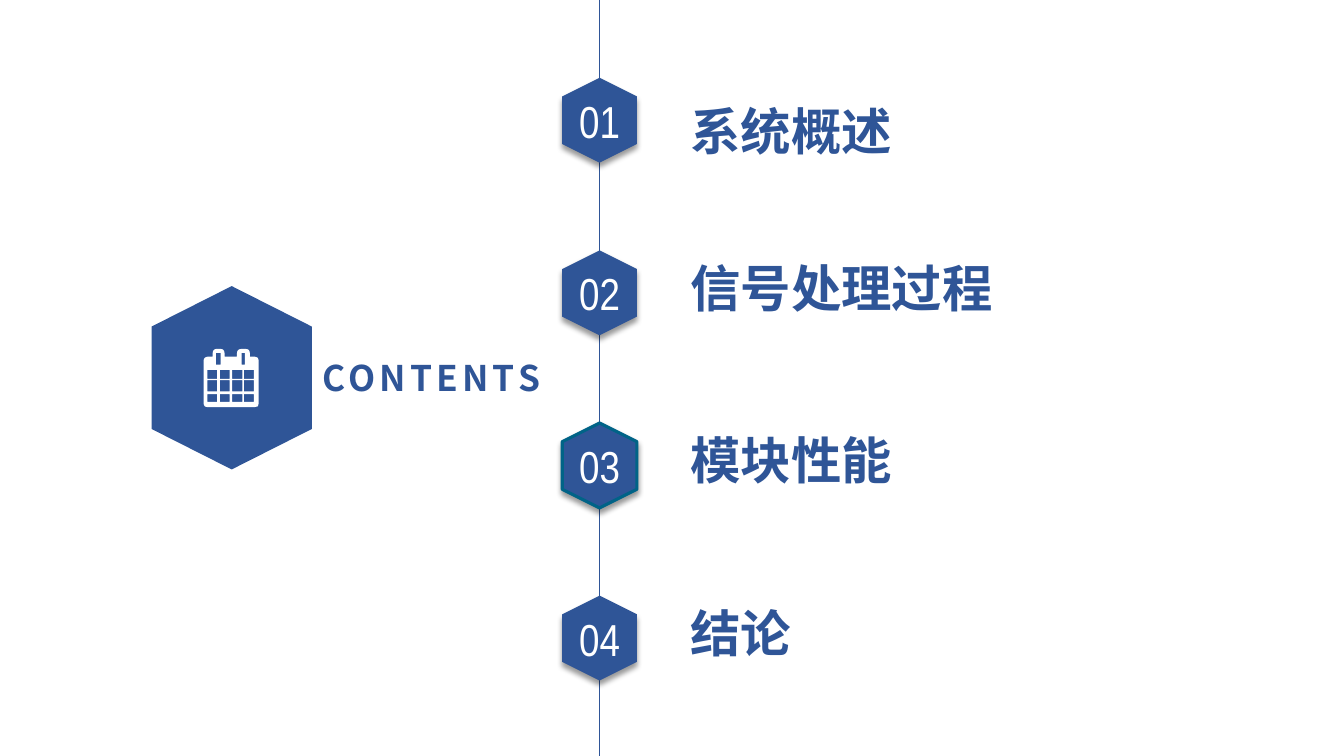
from pptx import Presentation
from pptx import util as u
from pptx.dml.color import RGBColor
from pptx.enum import shapes, text
from pptx.oxml import parse_xml
from pptx.oxml.ns import nsdecls, qn
from lxml import etree

Cm, Pt = u.Cm, u.Pt
HUE = {"blue": "2F5597", "teal": "006387", "white": "FFFFFF", "black": "000000"}
SANS, SLIM = "Noto Sans CJK SC", "Arial Narrow"
UNIT = Cm(0.01)  # freeform points are in hundredths of a centimetre
AXIS = 15.11     # centre of the timeline
STEP = 4.35      # distance between chapters

# chapter, bottom of its label, label width
ITEMS = [("系统概述", 4.04, 9.9), ("信号处理过程", 8.0, 9.9),
         ("模块性能", 12.35, 14.5), ("结论", 16.7, 14.5)]

# calendar outline: x, y, corner radius
CASE = [(513, 899, 10), (536, 899, 0), (536, 879, 11), (566, 879, 11),
        (566, 899, 0), (597, 899, 0), (597, 879, 13), (630, 879, 13),
        (630, 899, 0), (652, 899, 10), (652, 1026, 10), (513, 1026, 10)]
COLS = [(523, 547), (554, 579), (585, 611), (615, 640)]
ROWS = [(932, 955), (958, 986), (993, 1013)]
RINGS = [(544, 556), (609, 617)]


def rgb(name):
    return RGBColor.from_string(HUE[name])


def write(frame, words, size, font, color, align, anchor, bold=False):
    frame.vertical_anchor = anchor
    para = frame.paragraphs[0]
    para.alignment = align
    run = para.add_run()
    run.text = words
    run.font.size = Pt(size)
    run.font.bold = bold
    run.font.color.rgb = rgb(color)
    run.font.name = font
    props = run.font._element
    etree.SubElement(props, qn("a:ea")).set("typeface", font)
    return props


def bare(frame):
    frame.margin_left = frame.margin_right = 0
    frame.margin_top = frame.margin_bottom = 0
    frame.word_wrap = True
    frame.auto_size = text.MSO_AUTO_SIZE.NONE


def outline(slide, rings, fill):
    """One freeform made of closed rings; inner rings become holes."""
    pen = slide.shapes.build_freeform(*rings[0][0], scale=UNIT)
    for i, ring in enumerate(rings):
        if i:
            pen.move_to(*ring[0])
        pen.add_line_segments(ring[1:], close=True)
    shape = pen.convert_to_shape()
    shape.shadow.inherit = False
    shape.fill.solid()
    shape.fill.fore_color.rgb = rgb(fill)
    shape.line.fill.background()
    return shape


def hexagon(slide, mid, top, wide, high):
    left, right, low = mid - wide / 2, mid + wide / 2, top + high
    cut = high * 0.22
    ring = [(mid, top), (right, top + cut), (right, low - cut),
            (mid, low), (left, low - cut), (left, top + cut)]
    return outline(slide, [[(x * 100, y * 100) for x, y in ring]], "blue")


def soften(ring):
    """Round each corner with a short quadratic curve."""
    points = []
    for i, (x, y, r) in enumerate(ring):
        if not r:
            points.append((x, y))
            continue
        ends = []
        for px, py, _ in (ring[i - 1], ring[(i + 1) % len(ring)]):
            ratio = r / (abs(px - x) + abs(py - y))
            ends.append((x + (px - x) * ratio, y + (py - y) * ratio))
        (ax, ay), (bx, by) = ends
        for t in (0, 0.25, 0.5, 0.75, 1):
            a, c, b = (1 - t) ** 2, 2 * t * (1 - t), t * t
            points.append((a * ax + c * x + b * bx, a * ay + c * y + b * by))
    return points


def box(cols, rows):
    (x1, x2), (y1, y2) = cols, rows
    return [(x1, y1), (x2, y1), (x2, y2), (x1, y2)]


def calendar(slide):
    holes = [box(col, row) for row in ROWS for col in COLS]
    holes += [box(ring, (889, 919)) for ring in RINGS]
    outline(slide, [soften(CASE)] + holes, "white")


def heading(slide):
    title = slide.shapes.title
    title.left, title.top = Cm(7.82), Cm(8.66)
    title.width, title.height = Cm(6.1), Cm(1.7)
    bare(title.text_frame)
    props = write(title.text_frame, "CONTENTS", 25.2, SANS, "blue",
                  text.PP_ALIGN.CENTER, text.MSO_ANCHOR.MIDDLE, True)
    props.set("spc", "300")


def axis(slide):
    line = slide.shapes.add_connector(shapes.MSO_CONNECTOR.STRAIGHT,
                                      Cm(AXIS), 0, Cm(AXIS), Cm(19.05))
    line.line.color.rgb = rgb("blue")
    line.line.width = Pt(1)
    etree.SubElement(line._element.spPr, qn("a:effectLst"))


def shade(shape):
    glow = shape._element.spPr.find(qn("a:effectLst"))
    glow.append(parse_xml(
        f'<a:outerShdw {nsdecls("a")} blurRad="{Pt(4)}" dist="{Pt(3)}" '
        f'dir="5400000" rotWithShape="0"><a:srgbClr val="{HUE["black"]}">'
        '<a:alpha val="40000"/></a:srgbClr></a:outerShdw>'))


def badge(slide, index):
    shape = hexagon(slide, AXIS, 1.96 + STEP * index, 1.88, 2.14)
    shade(shape)
    shape.text_frame.word_wrap = False
    write(shape.text_frame, f"{index + 1:02d}", 32, SLIM, "white",
          text.PP_ALIGN.CENTER, text.MSO_ANCHOR.MIDDLE)
    return shape


def label(slide, words, low, wide):
    high = 1.25
    area = slide.shapes.add_textbox(Cm(17.4), Cm(low - high), Cm(wide), Cm(high))
    bare(area.text_frame)
    write(area.text_frame, words, 36, SANS, "blue",
          text.PP_ALIGN.LEFT, text.MSO_ANCHOR.BOTTOM, True)


def main():
    deck = Presentation()
    deck.slide_width, deck.slide_height = Cm(33.87), Cm(19.05)
    slide = deck.slides.add_slide(deck.slide_layouts[5])

    # Heading with its calendar sign
    hexagon(slide, 5.84, 7.21, 4.05, 4.62)
    calendar(slide)
    heading(slide)

    # Timeline of chapters
    axis(slide)
    badges = []
    for index, (words, low, wide) in enumerate(ITEMS):
        label(slide, words, low, wide)
        badges.append(badge(slide, index))

    # Outlined third chapter
    badges[2].line.color.rgb = rgb("teal")
    badges[2].line.width = Pt(2.25)

    deck.save("out.pptx")


if __name__ == "__main__":
    main()
